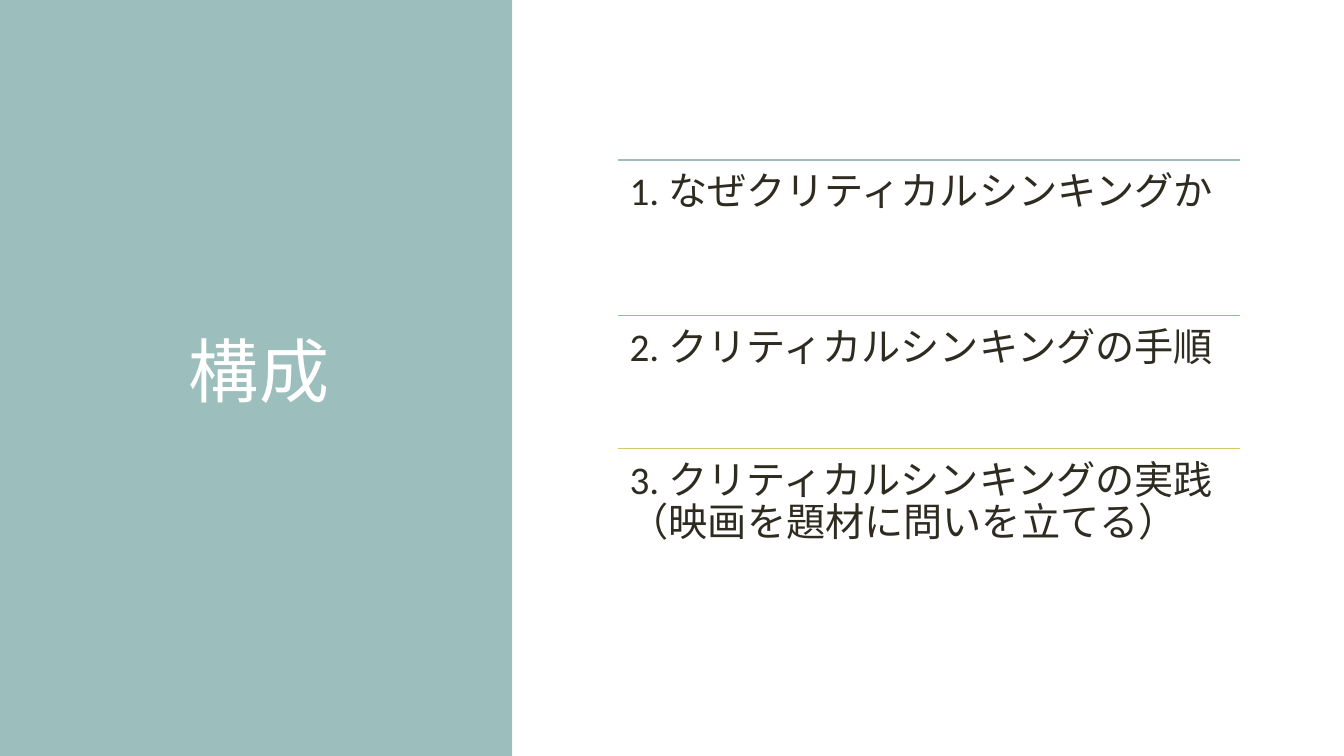
from dataclasses import dataclass

from pptx import Presentation
from pptx import util as u
from pptx.dml.color import RGBColor
from pptx.enum import shapes, text
from pptx.oxml.ns import qn


@dataclass(frozen=True)
class Theme:
    panel: str = "9CBEBD"
    title: str = "FFFFFF"
    body: str = "2E2B21"
    rules: tuple = ("9CBEBD", "88C785", "D2CB6C")
    title_font: str = "Cabin"
    body_font: str = "Calibri"
    title_size: int = 50
    body_size: int = 28


THEME = Theme()
WIDTH, HEIGHT = 960, 540

# Each agenda item with the height of its row in points
AGENDA = [
    ("1. なぜクリティカルシンキングか", 110.9),
    ("2. クリティカルシンキングの手順", 95),
    ("3. クリティカルシンキングの実践（映画を題材に問いを立てる）", 141.8),
]


def add_text(slide, box, content, font, size, color, inset, spacing):
    """Place a wrapped text box and return its paragraph."""
    frame = slide.shapes.add_textbox(*map(u.Pt, box)).text_frame
    frame.word_wrap = True
    frame.margin_left = frame.margin_right = u.Pt(inset)
    frame.margin_top = frame.margin_bottom = u.Pt(inset)
    paragraph = frame.paragraphs[0]
    paragraph.text = content
    paragraph.line_spacing = spacing
    run_font = paragraph.runs[0].font
    run_font.name = font
    run_font.size = u.Pt(size)
    run_font.color.rgb = RGBColor.from_string(color)
    return frame, paragraph


def add_rule(slide, left, top, width, color):
    """Draw a thin horizontal line without a shadow."""
    line = slide.shapes.add_connector(
        shapes.MSO_CONNECTOR.STRAIGHT,
        u.Pt(left), u.Pt(top), u.Pt(left + width), u.Pt(top))
    line.line.color.rgb = RGBColor.from_string(color)
    line.line.width = u.Pt(1.25)
    properties = line.element.spPr
    properties.append(properties.makeelement(qn("a:effectLst"), {}))


def add_title_panel(slide, box, title):
    """Coloured panel with the title in its middle."""
    left, top, width, height = box
    panel = slide.shapes.add_shape(
        shapes.MSO_SHAPE.RECTANGLE, *map(u.Pt, box))
    panel.shadow.inherit = False
    panel.fill.solid()
    panel.fill.fore_color.rgb = RGBColor.from_string(THEME.panel)
    panel.line.fill.background()

    title_box = (left + 50.4, top + 50.4, 269.3, height - 101.5)
    frame, paragraph = add_text(
        slide, title_box, title, THEME.title_font, THEME.title_size,
        THEME.title, inset=3.6, spacing=0.8)
    frame.vertical_anchor = text.MSO_ANCHOR.MIDDLE
    paragraph.alignment = text.PP_ALIGN.CENTER
    # Letter spacing of one point
    paragraph.runs[0].font._element.set("spc", "100")


def add_agenda(slide, box, items):
    """Stack the items downwards, each under its own coloured rule."""
    left, top, width, _ = box
    for (content, row_height), color in zip(items, THEME.rules):
        add_rule(slide, left, top, width, color)
        add_text(slide, (left, top, width, row_height), content,
                 THEME.body_font, THEME.body_size, THEME.body,
                 inset=8.4, spacing=0.9)
        top += row_height


def main():
    presentation = Presentation()
    presentation.slide_width = u.Pt(WIDTH)
    presentation.slide_height = u.Pt(HEIGHT)
    slide = presentation.slides.add_slide(presentation.slide_layouts[6])
    add_title_panel(slide, (0, 0, 365.8, HEIGHT), "構成")
    add_agenda(slide, (441.4, 114.5, 444.2, 347.7), AGENDA)
    presentation.save("out.pptx")


if __name__ == "__main__":
    main()
